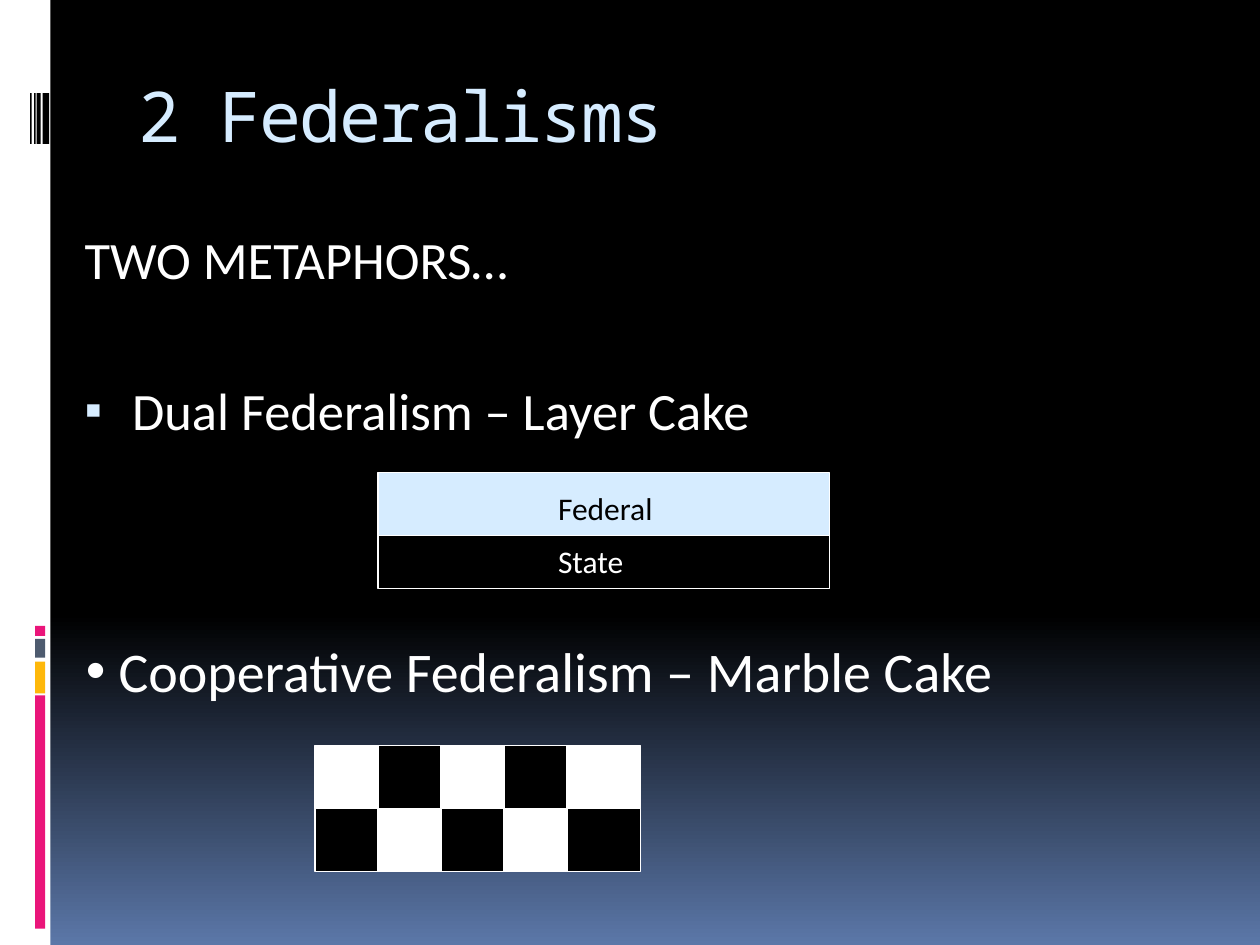
from lxml.etree import SubElement
from pptx import Presentation
from pptx.dml.color import RGBColor
from pptx.enum.shapes import MSO_SHAPE
from pptx.enum.text import MSO_ANCHOR, MSO_AUTO_SIZE, PP_ALIGN
from pptx.oxml.ns import qn
from pptx.util import Cm, Pt

BLACK, WHITE, ICE = "000000", "FFFFFF", "D6ECFF"
PINK, AMBER, SLATE, BLUE = "EA157A", "FEB80A", "4E5B6F", "5B77A8"


def rgb(value):
    return RGBColor.from_string(value)


def set_all(target, values):
    for name, value in values.items():
        setattr(target, name, value)


class SlideBuilder:
    heading_font = "Noto Sans Mono"
    text_font = "Calibri"
    frame_format = {"word_wrap": True, "auto_size": MSO_AUTO_SIZE.NONE,
                    "vertical_anchor": MSO_ANCHOR.TOP}

    def __init__(self, slide):
        self.slide = slide

    def background(self):
        fill = self.slide.background.fill
        fill.gradient()
        fill.gradient_angle = 270
        for stop, position, color in zip(fill.gradient_stops, (0.65, 1), (BLACK, BLUE)):
            stop.position = position
            stop.color.rgb = rgb(color)

    def block(self, left, top, width, height, color, outlined=False):
        block = self.slide.shapes.add_shape(
            MSO_SHAPE.RECTANGLE, Cm(left), Cm(top), Cm(width), Cm(height))
        block.shadow.inherit = False
        block.fill.solid()
        block.fill.fore_color.rgb = rgb(color)
        if outlined:
            block.line.color.rgb = rgb(WHITE)
            block.line.width = Pt(0.75)
        else:
            block.line.fill.background()

    def add_text(self, paragraph, text, size, color, font=None, before=0):
        set_all(paragraph, {"alignment": PP_ALIGN.LEFT, "space_before": Pt(before)})
        run = paragraph.add_run()
        run.text = text
        set_all(run.font, {"name": font or self.text_font, "size": Pt(size)})
        run.font.color.rgb = rgb(color)
        return run

    def indent(self, paragraph, left, hanging, bullet=None, color=WHITE, percent=100):
        """Set the indents and the bullet; without a bullet, switch it off."""
        properties = paragraph._p.get_or_add_pPr()
        properties.set("marL", str(Cm(left)))
        properties.set("indent", str(-Cm(hanging)))
        if bullet is None:
            SubElement(properties, qn("a:buNone"))
            return
        bullet_color = SubElement(properties, qn("a:buClr"))
        SubElement(bullet_color, qn("a:srgbClr"), val=color)
        SubElement(properties, qn("a:buSzPct"), val=str(percent * 1000))
        SubElement(properties, qn("a:buFont"), typeface="Arial")
        SubElement(properties, qn("a:buChar"), char=bullet)

    def placeholder(self, holder, left, top, width, height):
        set_all(holder, {"left": Cm(left), "top": Cm(top),
                         "width": Cm(width), "height": Cm(height)})
        set_all(holder.text_frame, self.frame_format)
        return holder.text_frame

    def title(self, text):
        frame = self.placeholder(self.slide.shapes.title, 2.54, 1.42, 21.59, 2.54)
        frame.margin_top = Cm(0.05)
        run = self.add_text(frame.paragraphs[0], text, 40, ICE, self.heading_font)
        run.font._element.set("spc", "-100")

    def body(self, lead, point):
        frame = self.placeholder(self.slide.placeholders[1], 1.27, 4.45, 22.86, 5.08)
        opening = frame.paragraphs[0]
        self.add_text(opening, lead, 30, WHITE, before=7)
        self.indent(opening, 1.14, 0.96)
        item = frame.add_paragraph()
        self.add_text(item, point, 30, WHITE, before=50)
        self.indent(item, 1.14, 0.96, "▪", ICE, 95)

    def label(self, left, top, width, height, text, size, color):
        box = self.slide.shapes.add_textbox(Cm(left), Cm(top), Cm(width), Cm(height))
        set_all(box.text_frame, self.frame_format)
        paragraph = box.text_frame.paragraphs[0]
        self.add_text(paragraph, text, size, color)
        return paragraph


def main():
    deck = Presentation()
    set_all(deck, {"slide_width": Cm(25.4), "slide_height": Cm(19.05)})
    page = SlideBuilder(deck.slides.add_slide(deck.slide_layouts[1]))
    page.background()

    page.block(0, 0, 1.02, 19.05, WHITE)
    for top, height, color in ((14.02, 4.7, PINK), (13.34, 0.64, AMBER),
                               (12.88, 0.38, SLATE), (12.62, 0.2, PINK)):
        page.block(0.71, top, 0.2, height, color)
    for left, width in ((0.86, 0.13), (0.74, 0.08), (0.69, 0.03), (0.61, 0.03)):
        page.block(left, 1.88, width, 1.02, BLACK)

    page.title("2 Federalisms")
    page.body("TWO METAPHORS…", "Dual Federalism – Layer Cake")

    page.block(7.62, 9.53, 9.1, 1.27, ICE, outlined=True)
    page.block(7.62, 10.8, 9.1, 1.06, BLACK, outlined=True)
    page.label(11, 9.74, 2.75, 1.02, "Federal", 18, BLACK)
    page.label(11, 10.8, 3.18, 1.02, "State", 18, WHITE)

    cooperative = page.label(1.48, 12.7, 21.38, 1.6,
                             "Cooperative Federalism – Marble Cake", 32, WHITE)
    page.indent(cooperative, 0.66, 0.66, "•")

    square, columns = 1.27, 5
    for row in range(2):
        for column in range(columns):
            width = 1.48 if column == columns - 1 else square
            color = BLACK if (row + column) % 2 else WHITE
            page.block(6.35 + column * square, 15.03 + row * square,
                       width, square, color, outlined=True)

    deck.save("out.pptx")


if __name__ == "__main__":
    main()
